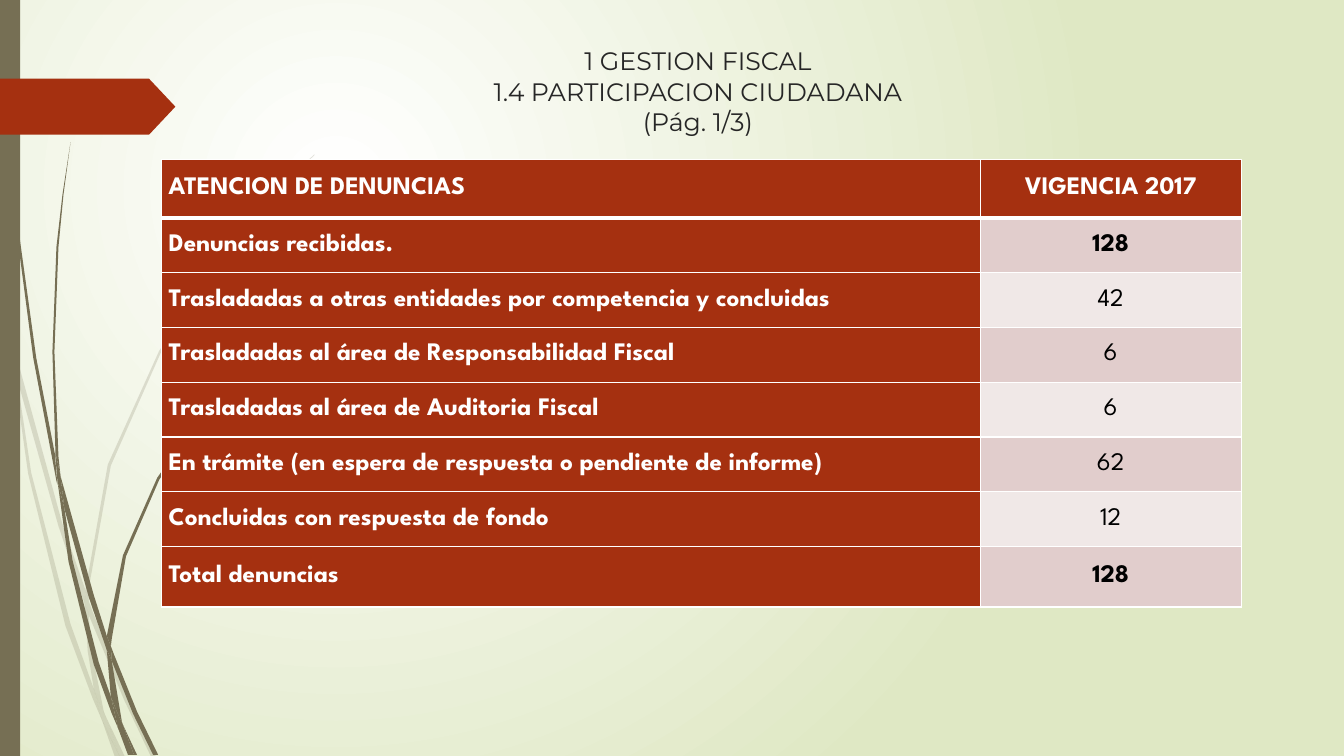
"""Build the slide on citizen complaints handled in 2017."""
from lxml import etree
from pptx import Presentation
from pptx.dml.color import RGBColor
from pptx.enum import shapes as sh, text as tx
from pptx.oxml import ns
from pptx.util import Pt

HEX = {"olive": "766F54", "rust": "A53010", "white": "FFFFFF", "lime": "DFE8C4",
       "ink": "262626", "black": "000000", "rose": "E1CDCC", "pale": "F0E8E7"}
TITLE = "1 GESTION FISCAL\v1.4 PARTICIPACION CIUDADANA\v(Pág. 1/3)"
ROWS = [
    ("ATENCION DE DENUNCIAS", "VIGENCIA 2017"),
    ("Denuncias recibidas.", "128"),
    ("Trasladadas a otras entidades por competencia y concluidas", "42"),
    ("Trasladadas al área de Responsabilidad Fiscal", "6"),
    ("Trasladadas al área de Auditoria Fiscal", "6"),
    ("En trámite (en espera de respuesta o pendiente de informe)", "62"),
    ("Concluidas con respuesta de fondo", "12"),
    ("Total denuncias", "128"),
]
BOLD = (0, 1, 7)
WIDE = (584.6, 186.5)
TALL = [41.8] + [39.1] * 6 + [43.2]
UNIT = Pt(0.72)
FAINT = [
    [(11, 350), (9, 322), (0, 282), (0, 299), (10, 344)],
    [(58, 522), (84, 599), (85, 586), (62, 520), (14, 345), (17, 376)],
    [(92, 607), (88, 596), (88, 610), (123, 694), (150, 751), (155, 751), (127, 692)],
    [(119, 751), (124, 751), (105, 711)],
    [(93, 683), (70, 619), (31, 469), (17, 376), (11, 350), (28, 470), (65, 621),
     (92, 693), (101, 714), (99, 707)],
    [(84, 599), (87, 646), (93, 683), (96, 692), (105, 711), (103, 706), (91, 646),
     (88, 610), (88, 608)],
    [(88, 584), (110, 462), (160, 349), (229, 245), (268, 198), (290, 175), (312, 154),
     (312, 153), (289, 175), (268, 197), (228, 244), (158, 348), (107, 461), (85, 584),
     (85, 586), (88, 596)],
    [(101, 714), (114, 751), (119, 751)],
    [(88, 608), (88, 610), (88, 596), (85, 586), (84, 599)],
    [(96, 692), (93, 683), (99, 707), (101, 714), (119, 751), (105, 711)],
]
SOLID = [
    [(7, 110), (17, 233), (33, 355), (56, 477), (57, 481), (55, 457), (55, 453),
     (36, 355), (19, 232), (8, 109), (5, 48), (4, 0), (3, 0), (4, 48)],
    [(88, 592), (106, 645), (106, 633), (106, 631), (93, 590), (60, 472), (64, 505)],
    [(113, 649), (110, 641), (111, 656), (132, 708), (152, 749), (157, 749), (136, 706)],
    [(110, 691), (98, 657), (72, 556), (64, 505), (57, 477), (68, 557), (93, 659),
     (111, 708), (117, 722), (116, 717)],
    [(60, 472), (58, 453), (54, 349), (58, 245), (63, 193), (70, 141), (62, 193),
     (56, 245), (52, 349), (55, 449)],
    [(133, 749), (136, 749), (122, 719)],
    [(57, 477), (64, 505), (60, 472), (55, 449), (55, 453)],
    [(111, 633), (125, 552), (158, 476), (205, 406), (231, 374), (245, 359), (261, 344),
     (260, 344), (245, 358), (231, 373), (204, 405), (156, 474), (122, 551), (106, 631),
     (110, 641)],
    [(117, 722), (127, 749), (131, 749)],
    [(106, 645), (110, 691), (116, 706), (122, 719), (121, 716), (111, 656), (109, 651)],
    [(106, 645), (109, 651), (111, 656), (110, 641), (106, 631), (106, 633)],
    [(116, 706), (110, 691), (116, 717), (117, 722), (130, 749), (133, 749), (122, 719)],
]


def rgb(name):
    return RGBColor.from_string(HEX[name])


def sub(node, tag, **attrs):
    return etree.SubElement(node, ns.qn(tag), attrs)


def say(frame, words, font, ink, bold=False, side="LEFT", size=18):
    frame.text = words
    para = frame.paragraphs[0]
    para.alignment = getattr(tx.PP_ALIGN, side)
    for run in para.runs:
        run.font.name, run.font.size, run.font.bold = font, Pt(size), bold
        run.font.color.rgb = rgb(ink)


def paint(shape, name, alpha=None):
    shape.shadow.inherit = False
    shape.fill.solid()
    shape.fill.fore_color.rgb = rgb(name)
    shape.line.fill.background()
    if alpha:
        tone = shape.element.spPr.find(".//" + ns.qn("a:srgbClr"))
        sub(tone, "a:alpha", val=str(alpha * 1000))


def edge(cell, row):
    props = cell._tc.get_or_add_tcPr()
    thick = {"T": 3 if row == 1 else 1, "B": 3 if row == 0 else 1}
    for spot, key in enumerate("LRTB"):
        line = sub(props, "a:ln" + key, w=str(Pt(thick.get(key, 1))))
        sub(sub(line, "a:solidFill"), "a:srgbClr", val=HEX["white"])
        props.insert(spot, line)


def ground(slide):
    fill = slide.background.fill
    fill.gradient()
    for stop, name, place in zip(fill.gradient_stops, ("white", "lime"), (0, 1)):
        stop.color.rgb, stop.position = rgb(name), place
    grad = slide.element.find(".//" + ns.qn("a:gradFill"))
    grad.remove(grad.find(ns.qn("a:lin")))
    sub(sub(grad, "a:path", path="circle"), "a:fillToRect",
        l="50000", t="50000", r="100000", b="100000")


def stems(slide):
    for group, alpha in ((FAINT, 20), (SOLID, None)):
        for first, *rest in group:
            pen = slide.shapes.build_freeform(*first, scale=UNIT)
            pen.add_line_segments(rest, close=True)
            paint(pen.convert_to_shape(), "olive", alpha)


def grid(slide):
    frame = slide.shapes.add_table(len(ROWS), 2, Pt(115.5), Pt(114),
                                   Pt(sum(WIDE)), Pt(sum(TALL)))
    table = frame.table
    table.horz_banding = False
    for col, wide in zip(table.columns, WIDE):
        col.width = Pt(wide)
    for i, row in enumerate(ROWS):
        table.rows[i].height = Pt(TALL[i])
        for j, words in enumerate(row):
            cell = table.cell(i, j)
            head = i == 0 or j == 0
            cell.margin_left = cell.margin_right = Pt(5)
            cell.margin_top = cell.margin_bottom = 0
            cell.vertical_anchor = tx.MSO_ANCHOR.MIDDLE
            cell.fill.solid()
            cell.fill.fore_color.rgb = rgb("rust" if head else "rose" if i % 2 else "pale")
            say(cell.text_frame, words, "League Spartan", "white" if head else "black",
                bold=head or i in BOLD, side="CENTER" if j else "LEFT")
            edge(cell, i)


def main():
    deck = Presentation()
    deck.slide_width, deck.slide_height = Pt(960), Pt(540)
    slide = deck.slides.add_slide(deck.slide_layouts[5])
    ground(slide)
    stems(slide)
    kind = sh.MSO_SHAPE
    bar = slide.shapes.add_shape(kind.RECTANGLE, 0, 0, Pt(14.4), Pt(540))
    paint(bar, "olive")
    flag = slide.shapes.add_shape(kind.PENTAGON, 0, Pt(56.2), Pt(125.3), Pt(40))
    flag.adjustments[0] = 0.47
    paint(flag, "rust")
    title = slide.shapes.title
    title.left, title.top, title.width, title.height = Pt(115), Pt(29), Pt(767), Pt(91.5)
    frame = title.text_frame
    frame.vertical_anchor = tx.MSO_ANCHOR.TOP
    frame.auto_size = tx.MSO_AUTO_SIZE.NONE
    say(frame, TITLE, "Montserrat", "ink", side="CENTER")
    slide.shapes.element.append(title.element)
    grid(slide)
    deck.save("out.pptx")


if __name__ == "__main__":
    main()
